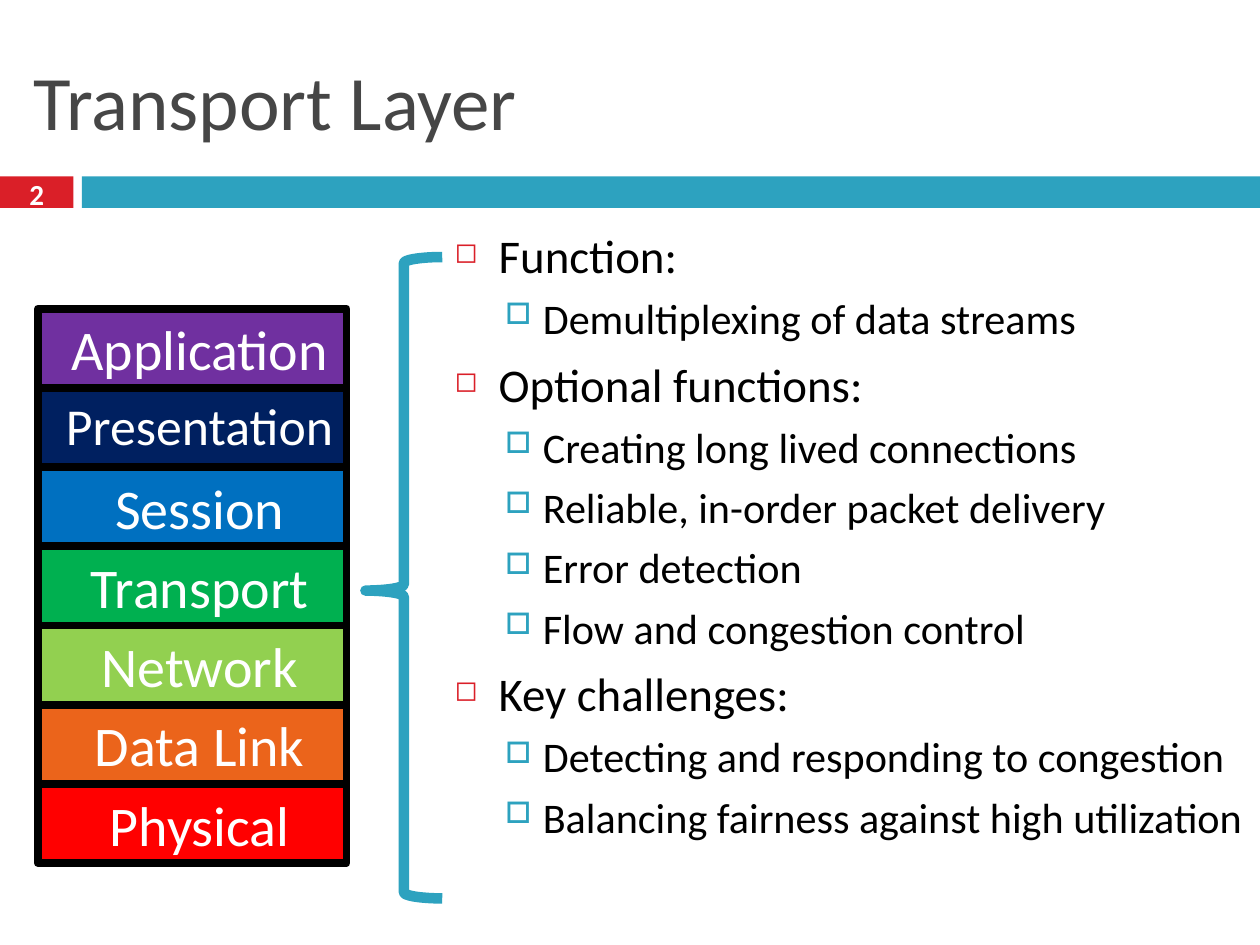
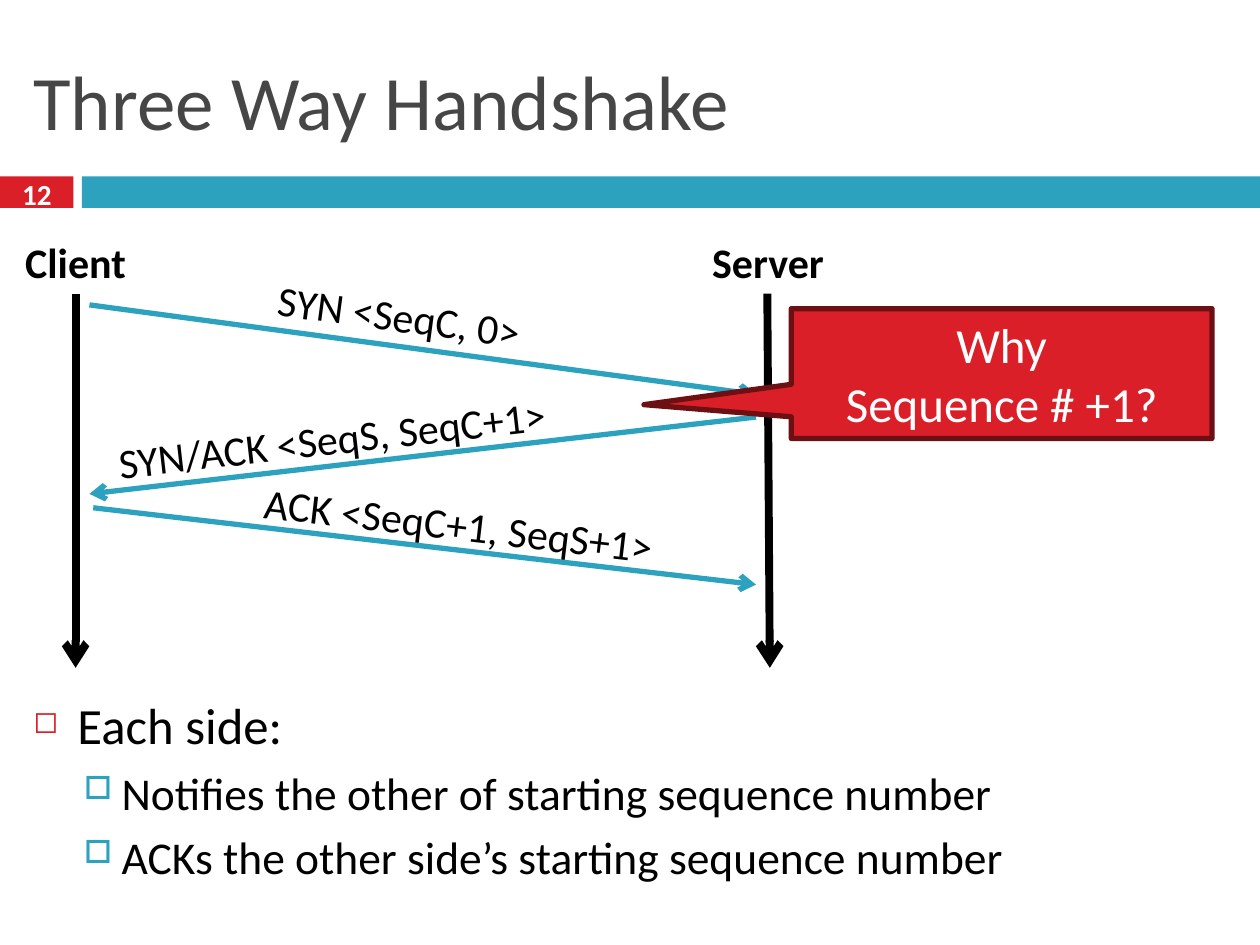
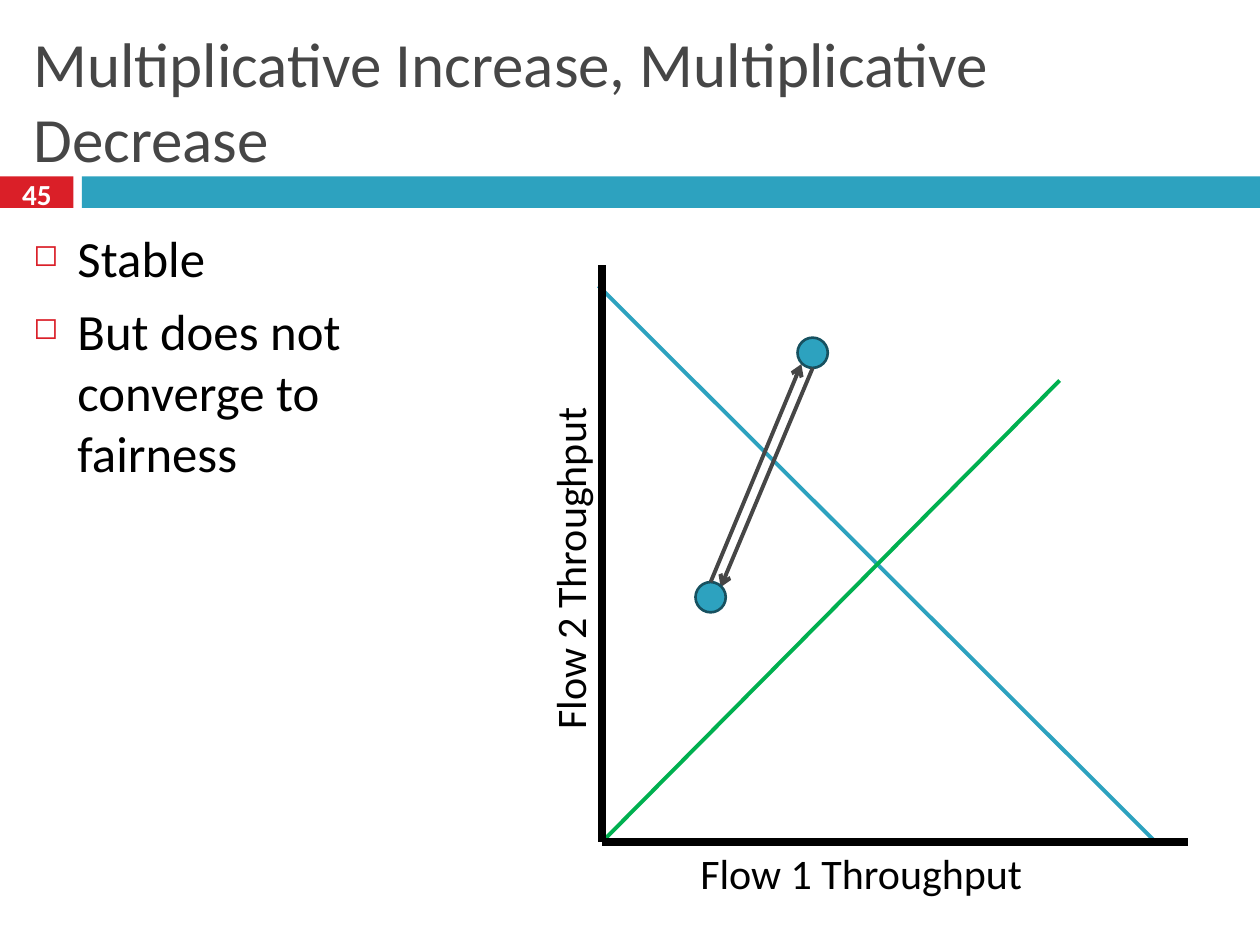
from dataclasses import dataclass
from math import atan2, degrees

from lxml.etree import SubElement
from pptx import Presentation
from pptx.dml.color import RGBColor
from pptx.enum.shapes import MSO_CONNECTOR, MSO_SHAPE as SHAPE
from pptx.enum.text import MSO_ANCHOR as ANCHOR, MSO_AUTO_SIZE, PP_ALIGN as ALIGN
from pptx.oxml.ns import qn
from pptx.util import Emu, Inches, Pt

COLUMNS, ROWS = 100, 75
SLIDE_WIDTH, SLIDE_HEIGHT = Inches(10), Inches(7.5)
COLUMN, ROW = SLIDE_WIDTH / COLUMNS, SLIDE_HEIGHT / ROWS

FONT = "Calibri"
RED = RGBColor(0xDA, 0x1F, 0x28)
DARK_RED = RGBColor(0x6D, 0x10, 0x14)
TEAL = RGBColor(0x2D, 0xA2, 0xBF)
DARK_TEAL = RGBColor(0x17, 0x51, 0x60)
GRAY = RGBColor(0x46, 0x46, 0x46)
BLACK = RGBColor(0, 0, 0)
WHITE = RGBColor(0xFF, 0xFF, 0xFF)
GREEN = RGBColor(0, 0xB0, 0x50)

LAYERS = [
    ("Application", RGBColor(0x70, 0x30, 0xA0), 32),
    ("Presentation", RGBColor(0, 0x20, 0x60), 29.6),
    ("Session", RGBColor(0, 0x70, 0xC0), 32),
    ("Transport", GREEN, 32),
    ("Network", RGBColor(0x92, 0xD0, 0x50), 32),
    ("Data Link", RGBColor(0xEB, 0x64, 0x1B), 32),
    ("Physical", RGBColor(0xFF, 0, 0), 32),
]
BULLETS = [
    {"char": "◻", "color": RED, "percent": 60, "margin": 0.35, "hang": 0.35, "before": 7},
    {"char": "□", "color": TEAL, "percent": 70, "margin": 0.7, "hang": 0.3, "before": 5.5},
]


@dataclass
class Box:
    """An area in grid columns and rows."""
    left: float
    top: float
    width: float
    height: float

    def area(self, column, row, width, height):
        """Return an area placed from this box's corner."""
        return Box(self.left + column, self.top + row, width, height)

    def point(self, column, row):
        """Return a grid point placed from this box's corner."""
        return self.left + column, self.top + row

    def emu(self):
        """Return left, top, width and height as slide lengths."""
        return (Emu(round(self.left * COLUMN)), Emu(round(self.top * ROW)),
                Emu(round(self.width * COLUMN)), Emu(round(self.height * ROW)))


def set_font(paragraph, size, color, bold=False):
    """Style a whole paragraph."""
    font = paragraph.font
    font.name, font.size, font.bold = FONT, Pt(size), bold
    font.color.rgb = color


def add_text(slide, box, text, size, color=BLACK, bold=False, align=ALIGN.LEFT,
             anchor=ANCHOR.TOP, wrap=True):
    """Add one paragraph of text in a box."""
    textbox = slide.shapes.add_textbox(*box.emu())
    frame = textbox.text_frame
    frame.word_wrap, frame.vertical_anchor = wrap, anchor
    if not wrap:
        frame.auto_size = MSO_AUTO_SIZE.SHAPE_TO_FIT_TEXT
    paragraph = frame.paragraphs[0]
    paragraph.text, paragraph.alignment = text, align
    set_font(paragraph, size, color, bold)
    return textbox


def add_figure(slide, preset, box, fill=None, line=None, weight=1):
    """Add a flat preset shape."""
    figure = slide.shapes.add_shape(preset, *box.emu())
    figure.shadow.inherit = False
    if fill is None:
        figure.fill.background()
    else:
        figure.fill.solid()
        figure.fill.fore_color.rgb = fill
    if line is None:
        figure.line.fill.background()
    else:
        figure.line.color.rgb = line
        figure.line.width = Pt(weight)
    return figure


def add_line(slide, start, end, color, weight, arrow=False):
    """Draw a straight line between two grid points."""
    ends = [Emu(round(length)) for column, row in (start, end)
            for length in (column * COLUMN, row * ROW)]
    connector = slide.shapes.add_connector(MSO_CONNECTOR.STRAIGHT, *ends)
    connector.line.color.rgb = color
    connector.line.width = Pt(weight)
    properties = connector._element.spPr
    if arrow:
        SubElement(properties.find(qn("a:ln")), qn("a:tailEnd"), type="arrow")
    SubElement(properties, qn("a:effectLst"))


def add_bullets(slide, box, items, sizes):
    """Add a two-level list of (level, text) items."""
    frame = slide.shapes.add_textbox(*box.emu()).text_frame
    frame.word_wrap = True
    for index, (level, text) in enumerate(items):
        paragraph = frame.add_paragraph() if index else frame.paragraphs[0]
        paragraph.text, paragraph.level = text, level
        bullet = BULLETS[level]
        paragraph.space_before = Pt(bullet["before"])
        properties = paragraph._p.get_or_add_pPr()
        properties.set("marL", str(Inches(bullet["margin"])))
        properties.set("indent", str(-Inches(bullet["hang"])))
        color = SubElement(properties, qn("a:buClr"))
        SubElement(color, qn("a:srgbClr"), val=str(bullet["color"]))
        SubElement(properties, qn("a:buSzPct"), val=str(bullet["percent"] * 1000))
        SubElement(properties, qn("a:buChar"), char=bullet["char"])
        set_font(paragraph, sizes[level], BLACK)


def add_page(deck, title, number, title_size=44):
    """Add a slide with its title, bands and number."""
    slide = deck.slides.add_slide(deck.slide_layouts[6])
    add_figure(slide, SHAPE.RECTANGLE, Box(0, 14, 5.83, 2.5), RED)
    add_figure(slide, SHAPE.RECTANGLE, Box(6.5, 14, 93.5, 2.5), TEAL)
    add_text(slide, Box(1.67, 2.5, 96.7, 10.83), title, title_size, GRAY, anchor=ANCHOR.MIDDLE)
    add_text(slide, Box(0, 13.7, 5.83, 3.3), str(number), 16.6, WHITE, True,
             ALIGN.CENTER, ANCHOR.MIDDLE)
    return slide


def draw_layer_stack(slide, box):
    """Stack the network layers in equal rows."""
    height = box.height / len(LAYERS)
    for index, (name, color, size) in enumerate(LAYERS):
        layer = add_figure(slide, SHAPE.RECTANGLE, box.area(0, index * height, box.width, height),
                           color, BLACK, 4.5)
        frame = layer.text_frame
        frame.vertical_anchor = ANCHOR.TOP
        paragraph = frame.paragraphs[0]
        paragraph.text, paragraph.alignment = name, ALIGN.CENTER
        paragraph._p.get_or_add_pPr().set("marL", str(Inches(0.12)))
        set_font(paragraph, size, WHITE)


def draw_brace(slide, box):
    """Draw the brace that opens from the transport layer."""
    brace = add_figure(slide, SHAPE.LEFT_BRACE, box, line=TEAL, weight=6)
    brace.adjustments[0], brace.adjustments[1] = 0.08, 0.52


def draw_handshake(slide, box):
    """Draw both timelines and the three messages between them."""
    for name, label_left, label_width, top, bottom in [
        ("Client", 0, 11.4, 5.7, 5.7),
        ("Server", 54.4, 12.5, 60.6, 60.8),
    ]:
        add_line(slide, box.point(top, 5), box.point(bottom, box.height), BLACK, 4.5, True)
        add_text(slide, box.area(label_left, 0, label_width, 5), name, 24, bold=True,
                 align=ALIGN.CENTER, wrap=False)
    for message, start, end, label in [
        ("SYN <SeqC, 0>", (6.8, 5.9), (59.7, 13), (20.7, 4.6, 26.9, 5)),
        ("SYN/ACK <SeqS, SeqC+1>", (59.7, 14.8), (6.8, 20.9), (8, 13.5, 44, 5)),
        ("ACK <SeqC+1, SeqS+1>", (7.1, 22), (59.7, 28.1), (19.6, 21.2, 40, 5)),
    ]:
        add_line(slide, box.point(*start), box.point(*end), TEAL, 3, True)
        (left, left_row), (right, right_row) = sorted((start, end))
        caption = add_text(slide, box.area(*label), message, 24, wrap=False)
        caption.rotation = degrees(atan2(right_row - left_row, right - left))


def draw_question(slide, box):
    """Draw the callout that points at the reply."""
    callout = add_figure(slide, SHAPE.RECTANGULAR_CALLOUT, box, RED, DARK_RED, 3)
    callout.adjustments[0], callout.adjustments[1] = -0.85, 0.24
    frame = callout.text_frame
    frame.vertical_anchor = ANCHOR.MIDDLE
    frame.text = "Why\nSequence # +1?"
    for paragraph in frame.paragraphs:
        paragraph.alignment = ALIGN.CENTER
        set_font(paragraph, 28, WHITE)


def draw_throughput(slide, box):
    """Plot the two flows swinging around the efficiency line."""
    origin = box.point(0, box.height)
    add_text(slide, box.area(6.8, box.height, 30, 5), "Flow 1 Throughput", 24, wrap=False)
    vertical = add_text(slide, box.area(-17.6, 20.4, 30, 5), "Flow 2 Throughput", 24, wrap=False)
    vertical.rotation = 270
    add_line(slide, box.point(-0.3, 1.7), box.point(43.9, box.height), TEAL, 2.25)
    add_line(slide, origin, box.point(36.3, 9.2), GREEN, 2.25)
    add_line(slide, origin, box.point(box.width, box.height), BLACK, 4.5)
    add_line(slide, origin, box.point(0, 0), BLACK, 4.5)
    for state, start, end in [
        ((15.5, 5.8), (16.7, 8.2), (9.4, 25.6)),
        ((7.4, 25.2), (8.6, 25.2), (15.8, 7.9)),
    ]:
        add_figure(slide, SHAPE.OVAL, box.area(*state, 2.4, 2.4), TEAL, DARK_TEAL, 1.5)
        add_line(slide, box.point(*start), box.point(*end), GRAY, 2.25, True)


def transport_slide(deck):
    """Build the overview of the transport layer."""
    slide = add_page(deck, "Transport Layer", 2)
    add_bullets(slide, Box(35.1, 17.5, 64.9, 55.8), [
        (0, "Function:"),
        (1, "Demultiplexing of data streams"),
        (0, "Optional functions:"),
        (1, "Creating long lived connections"),
        (1, "Reliable, in-order packet delivery"),
        (1, "Error detection"),
        (1, "Flow and congestion control"),
        (0, "Key challenges:"),
        (1, "Detecting and responding to congestion"),
        (1, "Balancing fairness against high utilization"),
    ], (26.8, 24.1))
    draw_layer_stack(slide, Box(3, 24.5, 24.5, 44))
    draw_brace(slide, Box(29, 20.4, 6.1, 50.9))


def handshake_slide(deck):
    """Build the handshake diagram with its summary."""
    slide = add_page(deck, "Three Way Handshake", 12)
    add_bullets(slide, Box(1.67, 54.6, 96.7, 18.8), [
        (0, "Each side:"),
        (1, "Notifies the other of starting sequence number"),
        (1, "ACKs the other side’s starting sequence number"),
    ], (29, 26))
    draw_handshake(slide, Box(0.3, 18.3, 66.9, 34.7))
    draw_question(slide, Box(62.8, 24.5, 33.4, 10.3))


def fairness_slide(deck):
    """Build the throughput plot with its findings."""
    slide = add_page(deck, "Multiplicative Increase, Multiplicative Decrease", 45, 36)
    add_bullets(slide, Box(1.67, 17.5, 33.4, 55.8), [
        (0, "Stable"),
        (0, "But does not converge to fairness"),
    ], (29, 26))
    draw_throughput(slide, Box(47.8, 21, 46.5, 45.8))


def main():
    """Build and save the deck."""
    deck = Presentation()
    deck.slide_width, deck.slide_height = SLIDE_WIDTH, SLIDE_HEIGHT
    transport_slide(deck)
    handshake_slide(deck)
    fairness_slide(deck)
    deck.save("out.pptx")


if __name__ == "__main__":
    main()
